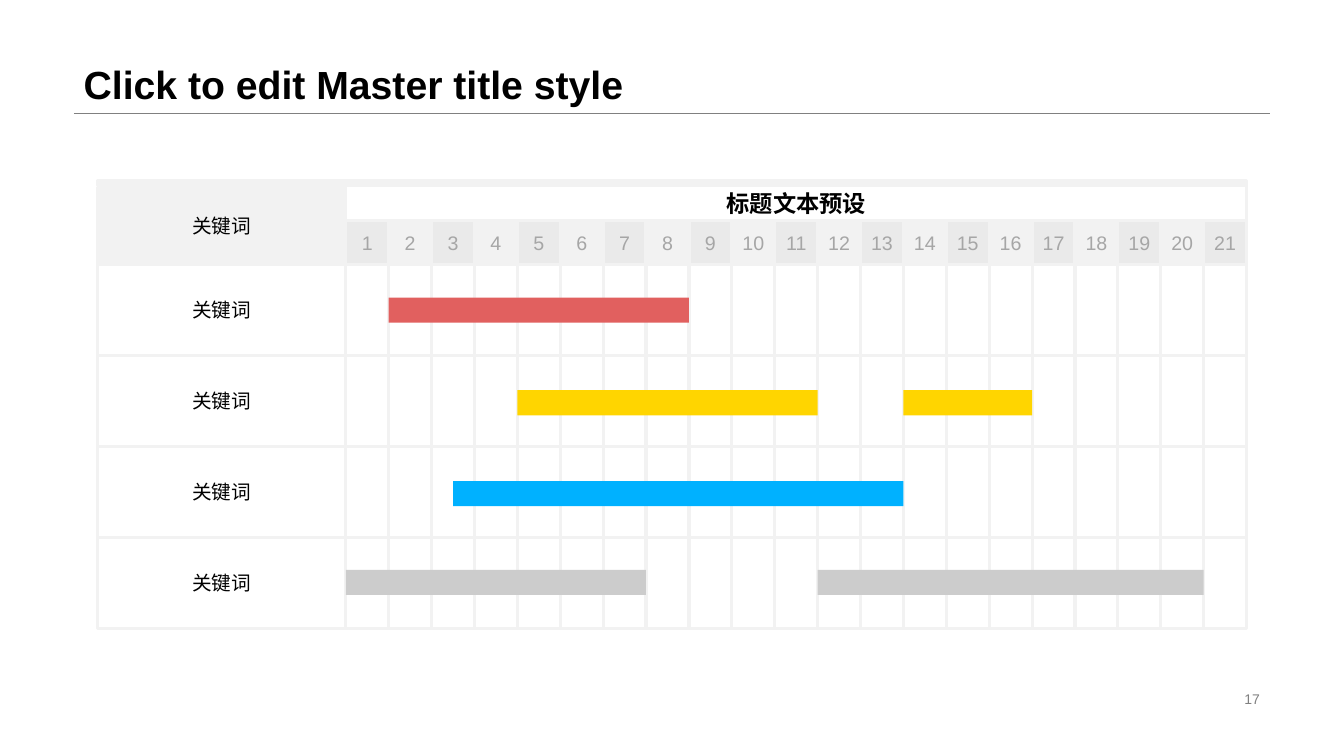
from lxml import etree
from pptx import Presentation
from pptx import util as u
from pptx.dml.color import RGBColor
from pptx.enum import shapes, text
from pptx.oxml.ns import qn

FONT = "Arial"
GRID, WHITE, BLACK, GREY = "F2F2F2", "FFFFFF", "000000", "808080"
KEYWORD = "关键词"

# Gantt grid, in points
LEFT, GRID_LEFT = 69.9, 247
LABEL_WIDTH = GRID_LEFT - LEFT
COLUMNS, COLUMN_WIDTH = 21, 30.64
GRID_WIDTH = COLUMNS * COLUMN_WIDTH
ROW_TOP, ROW_HEIGHT = 188.8, 65
NUMBER_TOP = 157.6
BAR_HEIGHT = 18

# Each row: bar top, colour, and (start, length) of its bars in columns
ROWS = [
    (212.5, "E1605F", [(1, 7)]),
    (278.7, "FFD500", [(4, 7), (13, 3)]),
    (343.6, "00B1FF", [(2.5, 10.5)]),
    (407, "CCCCCC", [(0, 7), (11, 9)]),
]


def color(value):
    return RGBColor.from_string(value)


def box(left, top, width, height):
    return [u.Pt(length) for length in (left, top, width, height)]


def write(shape, words, size, ink, align, anchor, bold=False):
    frame = shape.text_frame
    frame.word_wrap = True
    frame.vertical_anchor = anchor
    paragraph = frame.paragraphs[0]
    paragraph.text = words
    paragraph.alignment = align
    font = paragraph.runs[0].font
    font.name, font.size, font.bold = FONT, u.Pt(size), bold
    font.color.rgb = color(ink)
    return paragraph


def add_rectangle(slide, bounds, fill, outlined=True):
    shape = slide.shapes.add_shape(shapes.MSO_SHAPE.RECTANGLE, *box(*bounds))
    shape.shadow.inherit = False
    shape.fill.solid()
    shape.fill.fore_color.rgb = color(fill)
    if outlined:
        shape.line.color.rgb = color(GRID)
        shape.line.width = u.Pt(2.25)
    else:
        shape.line.fill.background()
    return shape


def add_cell(slide, bounds, fill, words, size=14, ink=BLACK, bold=False):
    shape = add_rectangle(slide, bounds, fill)
    frame = shape.text_frame
    frame.margin_left = frame.margin_right = 0
    write(shape, words, size, ink, text.PP_ALIGN.CENTER,
          text.MSO_ANCHOR.MIDDLE, bold)


def add_text(slide, bounds, words, size, ink, align, anchor, bold=False):
    shape = slide.shapes.add_textbox(*box(*bounds))
    return write(shape, words, size, ink, align, anchor, bold)


def add_rule(slide, left, right, top):
    rule = slide.shapes.add_connector(
        shapes.MSO_CONNECTOR.STRAIGHT,
        u.Pt(left), u.Pt(top), u.Pt(right), u.Pt(top))
    rule.line.color.rgb = color(GREY)
    rule.line.width = u.Pt(0.25)
    etree.SubElement(rule._element.spPr, qn("a:effectLst"))


def column_left(column):
    return GRID_LEFT + column * COLUMN_WIDTH


def add_header(slide):
    add_rectangle(slide, (LEFT, 129, LABEL_WIDTH + GRID_WIDTH, 3.5), GRID)
    add_cell(slide, (LEFT, 134, LABEL_WIDTH, ROW_TOP - 134), GRID, KEYWORD)
    add_cell(slide, (GRID_LEFT, 132.5, GRID_WIDTH, NUMBER_TOP - 132.5),
             WHITE, "标题文本预设", 16.6, bold=True)
    for column in reversed(range(COLUMNS)):
        bounds = (column_left(column), NUMBER_TOP,
                  COLUMN_WIDTH, ROW_TOP - NUMBER_TOP)
        fill = GRID if column % 2 else "EAEAEA"
        add_cell(slide, bounds, fill, str(column + 1), ink="A6A6A6")


def add_row(slide, row):
    top = ROW_TOP + row * ROW_HEIGHT
    for column in reversed(range(COLUMNS)):
        add_rectangle(
            slide, (column_left(column), top, COLUMN_WIDTH, ROW_HEIGHT), WHITE)
    add_cell(slide, (LEFT, top, LABEL_WIDTH, ROW_HEIGHT), WHITE, KEYWORD)


def main():
    presentation = Presentation()
    presentation.slide_width, presentation.slide_height = u.Pt(960), u.Pt(540)
    slide = presentation.slides.add_slide(presentation.slide_layouts[6])

    # Title, rule and page number
    add_rule(slide, 52.7, 907, 81)
    title = add_text(slide, (52.7, 0, 854.3, 81),
                     "Click to edit Master title style", 28, BLACK,
                     text.PP_ALIGN.LEFT, text.MSO_ANCHOR.BOTTOM, bold=True)
    title.line_spacing = 0.9
    add_text(slide, (678, 491, 229, 16.5), "17", 10, GREY,
             text.PP_ALIGN.RIGHT, text.MSO_ANCHOR.MIDDLE)

    # Grid
    add_header(slide)
    for row in range(len(ROWS)):
        add_row(slide, row)

    # Bars
    for top, fill, bars in ROWS:
        for start, length in bars:
            bounds = (column_left(start), top,
                      length * COLUMN_WIDTH, BAR_HEIGHT)
            add_rectangle(slide, bounds, fill, outlined=False)

    presentation.save("out.pptx")


if __name__ == "__main__":
    main()
